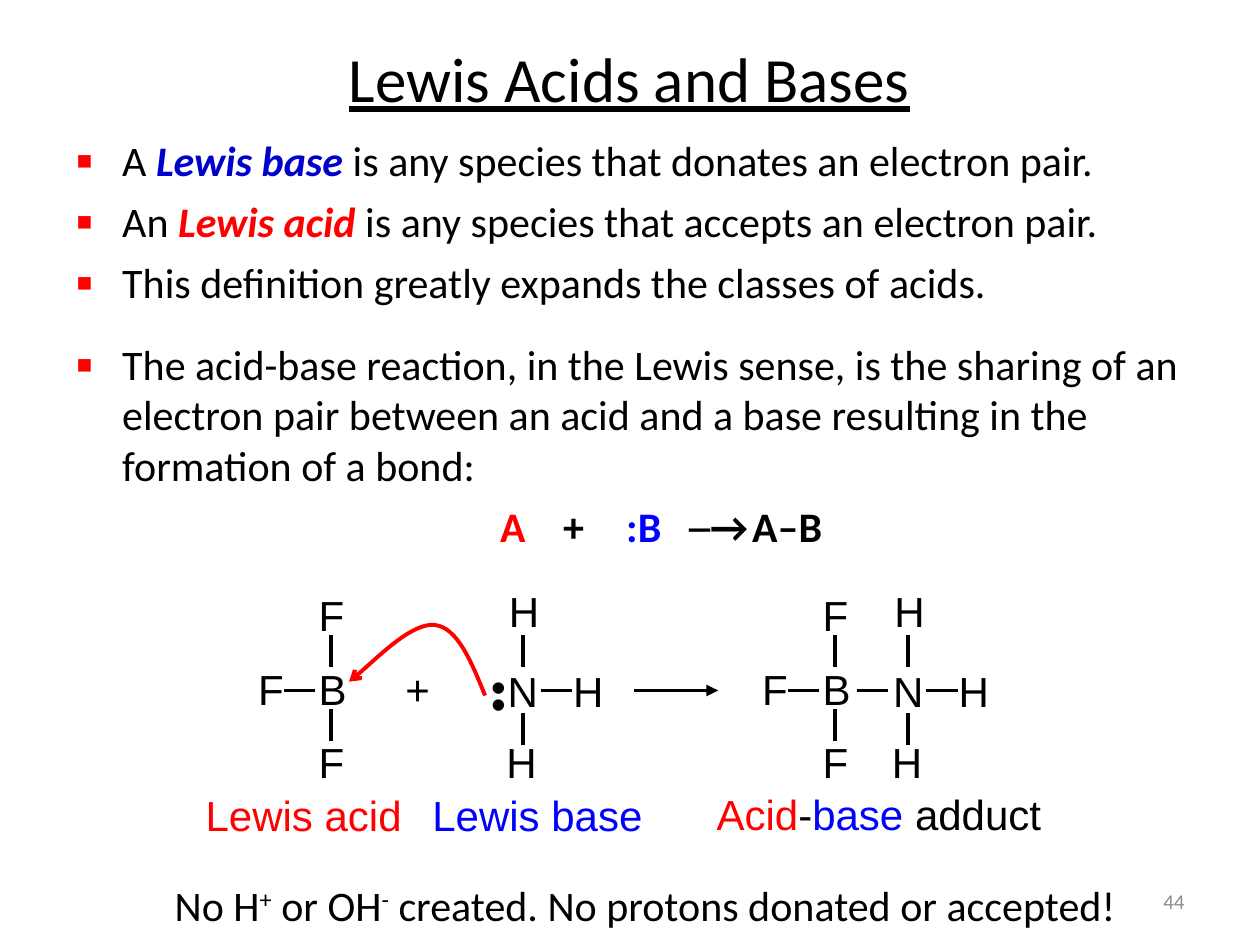
from lxml import etree
from pptx import Presentation
from pptx.dml.color import RGBColor
from pptx.enum.shapes import MSO_CONNECTOR
from pptx.enum.text import MSO_ANCHOR, MSO_AUTO_SIZE, PP_ALIGN
from pptx.oxml.ns import qn
from pptx.util import Pt

STRAIGHT = MSO_CONNECTOR.STRAIGHT
MIDDLE = MSO_ANCHOR.MIDDLE
NO_FIT = MSO_AUTO_SIZE.NONE
LEFT, CENTER, RIGHT = PP_ALIGN.LEFT, PP_ALIGN.CENTER, PP_ALIGN.RIGHT

PX = 9144  # EMU per px, 100 px to the inch
BLACK, RED, BLUE, NAVY, GRAY = "000000", "FF0000", "0000FF", "0000CC", "8C8C8C"


def px(value):
    return round(value * PX)


def rgb(color):
    return RGBColor.from_string(color)


def add_element(parent, tag, **attributes):
    child = etree.SubElement(parent, qn(tag))
    for key, value in attributes.items():
        child.set(key, str(value))
    return child


def add_run(paragraph, text, font="Calibri", size=24, color=BLACK,
            bold=False, italic=False, underline=False, raised=False):
    run = paragraph.add_run()
    run.text = text
    run.font.name = font
    run.font.size = Pt(size)
    run.font.color.rgb = rgb(color)
    run.font.bold = bold
    run.font.italic = italic
    run.font.underline = underline
    if raised:
        run.font._element.set("baseline", "30000")


def add_tabs(paragraph, positions):
    tabs = add_element(paragraph._p.get_or_add_pPr(), "a:tabLst")
    for position in positions:
        add_element(tabs, "a:tab", pos=px(position), algn="l")


def place(shape, left, top, width, height):
    shape.left, shape.top = px(left), px(top)
    shape.width, shape.height = px(width), px(height)


def add_label(shapes, box, runs, align=LEFT, wrap=False, tabs=(), **style):
    """Add a one-line text box; runs holds (text, format) pairs."""
    label = shapes.add_textbox(*map(px, box))
    frame = label.text_frame
    frame.word_wrap = wrap
    paragraph = frame.paragraphs[0]
    paragraph.alignment = align
    if tabs:
        add_tabs(paragraph, tabs)
    for text, changes in runs:
        add_run(paragraph, text, **{**style, **changes})
    return label


def style_line(line, color, head=None):
    line.color.rgb = rgb(color)
    line.width = Pt(2.25)
    if head:
        add_element(line._get_or_add_ln(), "a:tailEnd", type=head)


def add_line(shapes, x1, y1, x2, y2, head=None):
    connector = shapes.add_connector(STRAIGHT, px(x1), px(y1), px(x2), px(y2))
    style_line(connector.line, BLACK, head)
    add_element(connector._element.spPr, "a:effectLst")


def add_title(slide, box):
    title = slide.shapes.title
    place(title, *box)
    frame = title.text_frame
    frame.auto_size = NO_FIT
    frame.vertical_anchor = MIDDLE
    paragraph = frame.paragraphs[0]
    paragraph.alignment = CENTER
    add_run(paragraph, "Lewis Acids and Bases", size=36, underline=True)


def add_definitions(slide, box):
    body = slide.placeholders[1]
    place(body, *box)
    frame = body.text_frame
    frame.auto_size = NO_FIT
    bullets = [
        (0, [("A ", {}), ("Lewis base", dict(color=NAVY, bold=True, italic=True)),
             (" is any species that donates an electron pair.", {})]),
        (6, [("An ", {}), ("Lewis acid", dict(color=RED, bold=True, italic=True)),
             (" is any species that accepts an electron pair.", {})]),
        (6, [("This definition greatly expands the classes of acids.", {})]),
        (18, [("The acid-base reaction, in the Lewis sense, is the sharing of an "
               "electron pair between an acid and a base resulting in the "
               "formation of a bond:", {})]),
    ]
    for index, (space, runs) in enumerate(bullets):
        paragraph = frame.add_paragraph() if index else frame.paragraphs[0]
        paragraph.space_before = Pt(space)
        properties = paragraph._p.get_or_add_pPr()
        properties.set("marL", str(px(37)))
        properties.set("indent", str(px(-37)))
        bullet_color = add_element(properties, "a:buClr")
        add_element(bullet_color, "a:srgbClr", val=RED)
        add_element(properties, "a:buSzPct", val=120000)
        add_element(properties, "a:buFont", typeface="Arial")
        add_element(properties, "a:buChar", char="▪")
        for text, changes in runs:
            add_run(paragraph, text, **changes)

    equation = frame.add_paragraph()
    equation.space_before = Pt(6)
    properties = equation._p.get_or_add_pPr()
    properties.set("marL", str(px(337)))
    properties.set("indent", "0")
    add_element(properties, "a:buNone")
    add_tabs(equation, (388, 434, 491, 569))
    for text, color in (("A", RED), ("\t+", BLACK), ("\t:B", BLUE), ("\t─→\tA–B", BLACK)):
        add_run(equation, text, color=color, bold=True)


def add_molecule(shapes, box, row, tab, bond, axis, bonds_up_down, end, ends):
    """Draw a row of two atoms, with an end atom bonded above and below one of them."""
    left, top, width, height = box
    add_label(shapes, box, [(row, {})], tabs=(tab,), font="Arial")
    bond_x, bond_y = left + bond[0], top + bond[1]
    add_line(shapes, bond_x, bond_y, bond_x + 25, bond_y)
    for start in bonds_up_down:
        add_line(shapes, left + axis, top + start, left + axis, top + start - 25)
    for x, y in ends:
        add_label(shapes, (left + x, top + y, 44 if end == "H" else 40, height),
                  [(end, {})], font="Arial")


def add_boron_trifluoride(shapes, left, top):
    add_molecule(shapes, (left, top, 90, 50), "F\tB", tab=48, bond=(30, 26), axis=68,
                 bonds_up_down=(7, 66), end="F", ends=((48, -59), (48, 58)))


def add_ammonia(shapes, left, top):
    add_molecule(shapes, (left, top, 96, 50), "N\tH", tab=52, bond=(36, 25), axis=22,
                 bonds_up_down=(6, 68), end="H", ends=((1, -63), (-1, 57)))


def add_electron_arrow(shapes, left, top):
    points = [(108, 58), (97, 31), (86, 4), (68, 2), (50, 0), (11, 39), (0, 47)]
    corners = [(px(left + x), px(top + y)) for x, y in points]
    builder = shapes.build_freeform(*corners[0])
    builder.add_line_segments(corners[1:], close=False)
    arrow = builder.convert_to_shape()
    arrow.shadow.inherit = False
    arrow.fill.background()
    style_line(arrow.line, RED, "arrow")
    # Each three segments become one cubic curve.
    segments = list(arrow._element.iter(qn("a:lnTo")))
    outline = segments[0].getparent()
    for first in range(0, len(segments), 3):
        curve = add_element(outline, "a:cubicBezTo")
        for segment in segments[first:first + 3]:
            curve.append(segment[0])
            outline.remove(segment)


def add_reaction(slide, left, top):
    shapes = slide.shapes
    base = shapes.add_group_shape().shapes
    add_ammonia(base, left + 198, top + 63)
    for dot_y in (59, 73):
        add_label(base, (left + 185, top + dot_y, 32, 50), [("•", {})], font="Arial")
    add_line(shapes, left + 308, top + 88, left + 375, top + 88, "triangle")
    add_electron_arrow(shapes, left + 82, top + 34)
    add_boron_trifluoride(shapes.add_group_shape().shapes, left, top + 62)
    add_label(shapes, (left + 117, top + 62, 40, 50), [("+", {})], font="Arial")

    adduct = shapes.add_group_shape().shapes
    add_boron_trifluoride(adduct, left + 400, top + 62)
    add_line(adduct, left + 485, top + 88, left + 510, top + 88)
    add_ammonia(adduct, left + 504, top + 63)

    captions = [
        ((-43, 162, 178, 50), [("Lewis acid", dict(color=RED))]),
        ((137, 162, 189, 50), [("Lewis base", dict(color=BLUE))]),
        ((362, 161, 281, 50), [("Acid", dict(color=RED)), ("-", {}),
                               ("base ", dict(color=BLUE)), ("adduct", {})]),
    ]
    for (x, y, width, height), runs in captions:
        add_label(shapes, (left + x, top + y, width, height), runs,
                  align=CENTER, font="Arial")


def add_footer(slide, left, top):
    raised = dict(raised=True)
    add_label(slide.shapes, (left, top, 776, 50),
              [("No H", {}), ("+", raised), (" or OH", {}), ("-", raised),
               (" created. No protons donated or accepted!", {})], align=CENTER)
    number = add_label(slide.shapes, (left + 593, top + 2, 233, 40), [("44", {})],
                       align=RIGHT, wrap=True, size=12, color=GRAY)
    number.text_frame.vertical_anchor = MIDDLE


def main():
    prs = Presentation()
    prs.slide_width, prs.slide_height = px(1000), px(750)
    slide = prs.slides.add_slide(prs.slide_layouts[1])
    add_title(slide, (159, -1, 681, 125))
    add_definitions(slide, (50, 102, 900, 343))
    add_reaction(slide, 195, 460)
    add_footer(slide, 124, 693)
    prs.save("out.pptx")


if __name__ == "__main__":
    main()
